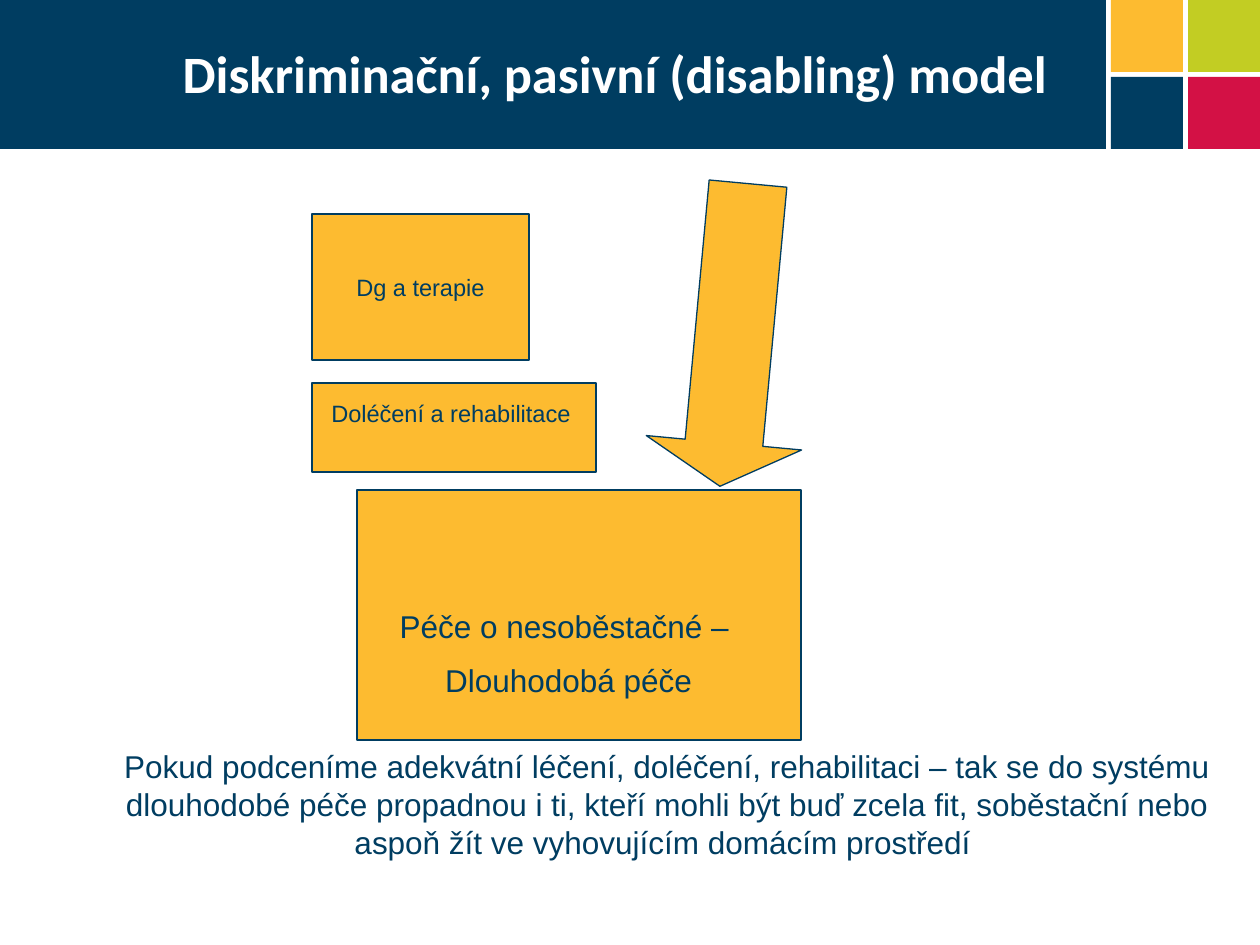
from dataclasses import dataclass

from pptx import Presentation
from pptx.dml.color import RGBColor
from pptx.enum.shapes import MSO_SHAPE
from pptx.enum.text import MSO_ANCHOR, MSO_AUTO_SIZE, PP_ALIGN
from pptx.util import Emu, Pt

RECT = MSO_SHAPE.RECTANGLE
PROCESS = MSO_SHAPE.FLOWCHART_PROCESS
ARROW = MSO_SHAPE.RIGHT_ARROW
MIDDLE, TOP = MSO_ANCHOR.MIDDLE, MSO_ANCHOR.TOP
CENTER, LEFT = PP_ALIGN.CENTER, PP_ALIGN.LEFT
FIT_SHAPE, NO_FIT = MSO_AUTO_SIZE.SHAPE_TO_FIT_TEXT, MSO_AUTO_SIZE.NONE
PX_PER_INCH = 126


@dataclass(frozen=True)
class Theme:
    navy: RGBColor = RGBColor(0x00, 0x3D, 0x61)
    amber: RGBColor = RGBColor(0xFD, 0xBB, 0x30)
    lime: RGBColor = RGBColor(0xC2, 0xCD, 0x23)
    red: RGBColor = RGBColor(0xD3, 0x11, 0x45)
    white: RGBColor = RGBColor(0xFF, 0xFF, 0xFF)
    title_font: str = "Calibri"
    body_font: str = "Arial"
    title_size: float = 30
    body_size: float = 18
    label_size: float = 13.5
    line_width: float = 0.75


@dataclass(frozen=True)
class Box:
    x: int
    y: int
    w: int
    h: int

    def emu(self) -> tuple[Emu, ...]:
        return tuple(px(v) for v in (self.x, self.y, self.w, self.h))


@dataclass(frozen=True)
class Label:
    box: Box
    lines: tuple[str, ...]
    size: float
    space_before: float = 0


THEME = Theme()
HEADER = Box(0, 0, 1106, 149)
TITLE = Box(170, 0, 936, 145)
TILE_X, TILE_SIZE, TILE_PITCH = 1111, 72, 77
TILES = ((THEME.amber, THEME.lime), (THEME.navy, THEME.red))
THERAPY = Box(312, 214, 217, 146)
REHABILITATION = Box(312, 383, 284, 89)
LONG_TERM_CARE = Box(357, 490, 444, 250)
DECLINE_ARROW = Box(582, 257, 304, 156)
LABELS = (
    Label(Box(312, 393, 278, 42), ("Doléčení a rehabilitace",), THEME.label_size),
    Label(Box(384, 601, 369, 108),
          ("Péče o nesoběstačné – ", "Dlouhodobá péče"), THEME.body_size, 9),
    Label(Box(74, 741, 1186, 127),
          ("Pokud podceníme adekvátní léčení, doléčení, rehabilitaci – tak se do "
           "systému dlouhodobé péče propadnou i ti, kteří mohli být buď zcela fit, "
           "soběstační nebo aspoň žít ve vyhovujícím domácím prostředí ",),
          THEME.body_size),
)


def px(value: int) -> Emu:
    return Emu(round(value * 914400 / PX_PER_INCH))


def add_block(s, kind, box: Box, fill: RGBColor, outlined: bool = False):
    sp = s.shapes.add_shape(kind, *box.emu())
    sp.shadow.inherit = False
    sp.fill.solid()
    sp.fill.fore_color.rgb = fill
    if outlined:
        sp.line.color.rgb = THEME.navy
        sp.line.width = Pt(THEME.line_width)
    else:
        sp.line.fill.background()
    return sp


def write(tf, lines: tuple[str, ...], size: float, space_before: float = 0,
          anchor=TOP) -> None:
    tf.word_wrap = True
    tf.vertical_anchor = anchor
    for i, line in enumerate(lines):
        p = tf.add_paragraph() if i else tf.paragraphs[0]
        p.text = line
        p.alignment = CENTER
        if i:
            p.space_before = Pt(space_before)
        p.font.name = THEME.body_font
        p.font.size = Pt(size)
        p.font.color.rgb = THEME.navy


def add_label(s, label: Label) -> None:
    tf = s.shapes.add_textbox(*label.box.emu()).text_frame
    write(tf, label.lines, label.size, label.space_before)
    tf.auto_size = FIT_SHAPE


def add_header(s) -> None:
    add_block(s, RECT, HEADER, THEME.navy)
    for row, colors in enumerate(TILES):
        for col, color in enumerate(colors):
            add_block(s, RECT, Box(TILE_X + col * TILE_PITCH, row * TILE_PITCH,
                                   TILE_SIZE, TILE_SIZE), color)


def add_title(s, text: str) -> None:
    title = s.shapes.title
    s.shapes._spTree.append(title._element)
    title.left, title.top, title.width, title.height = TITLE.emu()
    tf = title.text_frame
    tf.text = text
    tf.auto_size = NO_FIT
    tf.vertical_anchor = MIDDLE
    p = tf.paragraphs[0]
    p.alignment = LEFT
    p.font.name = THEME.title_font
    p.font.size = Pt(THEME.title_size)
    p.font.bold = True
    p.font.color.rgb = THEME.white


def main() -> None:
    prs = Presentation()
    prs.slide_width, prs.slide_height = px(1260), px(945)
    s = prs.slides.add_slide(prs.slide_layouts[5])

    add_header(s)
    add_title(s, "Diskriminační, pasivní (disabling) model")

    therapy = add_block(s, PROCESS, THERAPY, THEME.amber, outlined=True)
    write(therapy.text_frame, ("Dg a terapie",), THEME.label_size, anchor=MIDDLE)
    for box in (REHABILITATION, LONG_TERM_CARE):
        add_block(s, PROCESS, box, THEME.amber, outlined=True)

    arrow = add_block(s, ARROW, DECLINE_ARROW, THEME.amber, outlined=True)
    arrow.rotation = 95.3
    arrow.adjustments[0] = 0.5
    arrow.adjustments[1] = 0.28

    for label in LABELS:
        add_label(s, label)

    prs.save("out.pptx")


if __name__ == "__main__":
    main()
